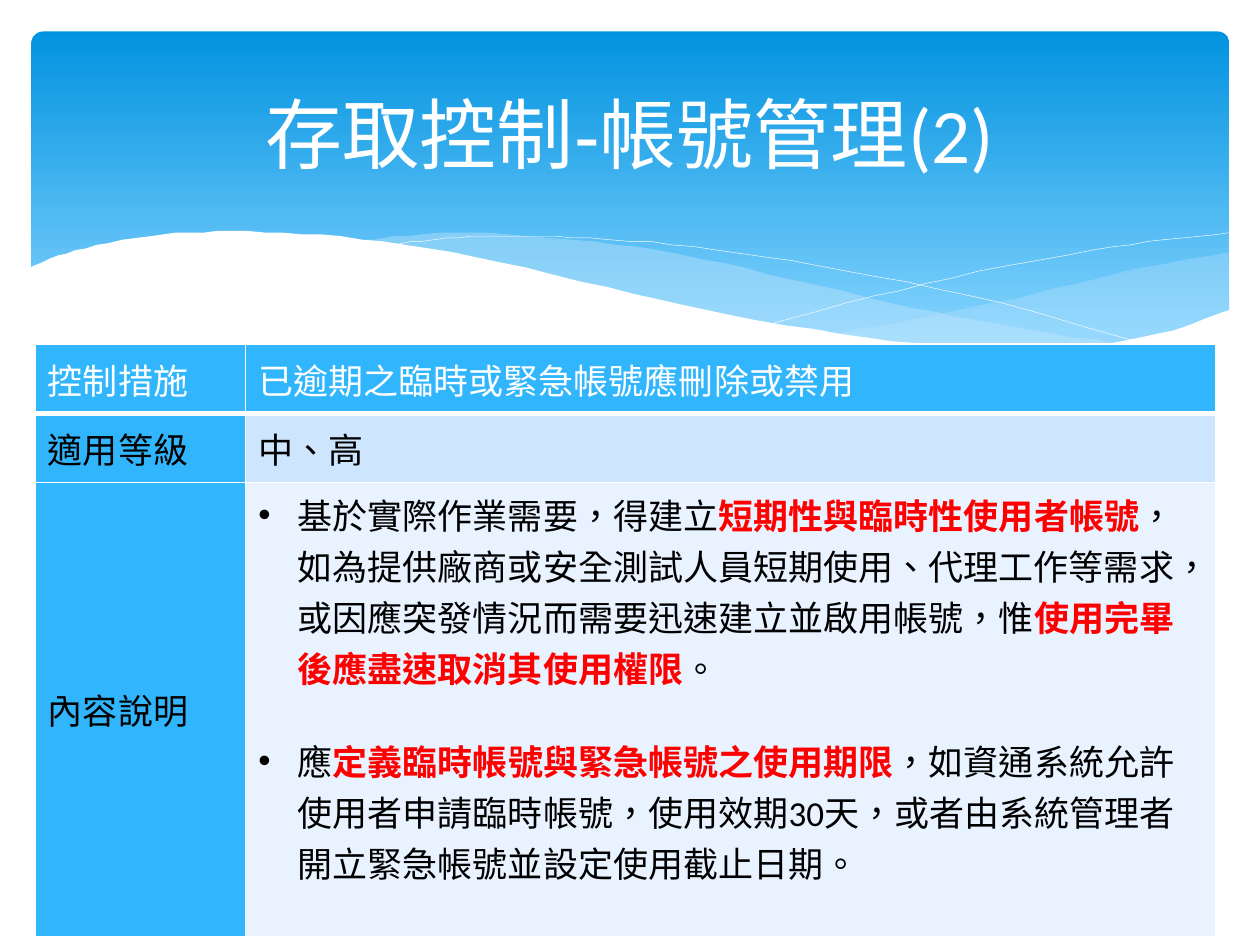
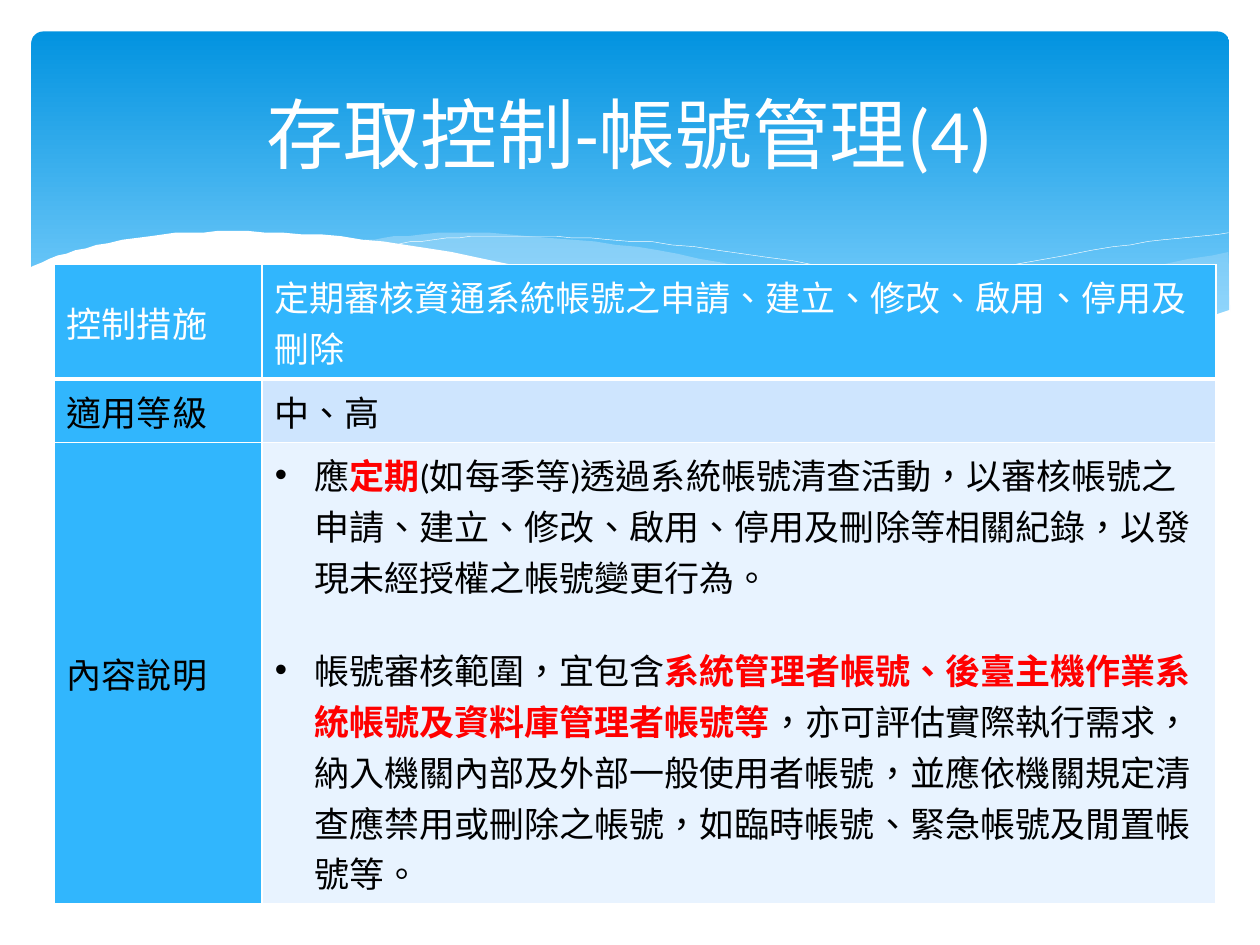
import pptx
import pptx.util
import pptx.dml.color
import pptx.enum.dml
import pptx.enum.lang
import pptx.enum.shapes
import pptx.enum.text
from dataclasses import dataclass
from lxml import etree
from pptx.oxml.ns import qn

Pt = pptx.util.Pt


@dataclass(frozen=True)
class Theme:
    white: str = "FFFFFF"
    black: str = "000000"
    red: str = "FF0000"
    sky: str = "31B6FD"
    pale: str = "CEE5FE"
    faint: str = "E8F3FF"
    mist: str = "C6E7FC"
    deep: str = "0293E0"
    light: str = "83D3FE"
    font: str = "Calibri"
    title: int = 44
    body: int = 20
    gap: float = 24.4
    hang: float = 22.5


THEME = Theme()
LABELS = ["控制措施", "適用等級", "內容說明"]

# In each note, every second part is stressed.
SLIDES = [
    dict(
        title=[("存取控制-", "Arial"), ("帳號管理(2)", THEME.font)],
        control="已逾期之臨時或緊急帳號應刪除或禁用",
        level="中、高",
        notes=[
            ["基於實際作業需要，得建立", "短期性與臨時性使用者帳號",
             "，如為提供廠商或安全測試人員短期使用、代理工作等需求，"
             "或因應突發情況而需要迅速建立並啟用帳號，惟",
             "使用完畢後應盡速取消其使用權限", "。"],
            ["應", "定義臨時帳號與緊急帳號之使用期限",
             "，如資通系統允許使用者申請臨時帳號，使用效期30天，"
             "或者由系統管理者開立緊急帳號並設定使用截止日期。"],
        ],
        at=(20.2, 196.6), cols=(120.2, 554.4), rows=(39.6, 39.6, 258.5), foot=28,
    ),
    dict(
        title=[("存取控制-帳號管理(4)", THEME.font)],
        control="定期審核資通系統帳號之申請、建立、修改、啟用、停用及刪除",
        level="中、高",
        notes=[
            ["應", "定期",
             "(如每季等)透過系統帳號清查活動，以審核帳號之申請、建立、修改、"
             "啟用、停用及刪除等相關紀錄，以發現未經授權之帳號變更行為。"],
            ["帳號審核範圍，宜包含",
             "系統管理者帳號、後臺主機作業系統帳號及資料庫管理者帳號等",
             "，亦可評估實際執行需求，納入機關內部及外部一般使用者帳號，"
             "並應依機關規定清查應禁用或刪除之帳號，如臨時帳號、緊急帳號及閒置帳號等。"],
        ],
        at=(31, 151.2), cols=(118.8, 545), rows=(65.4, 36.1, 263.3), foot=3.6,
    ),
]

# Each wave is a list of edges; each edge is a smooth curve through its points.
RIGHT = [
    [(702.5, 144), (652.3, 153.4), (620, 160.6), (579.6, 170.6), (524.9, 182.2),
     (476, 190.8)],
    [(476, 190.8), (517.7, 195.8), (553.7, 199.4), (586, 200.2), (614.9, 198.7),
     (645.8, 194.4), (673.2, 188.6), (702.5, 177.8)],
]
MIDDLE = [
    [(643, 196.6), (602.6, 190.8), (558, 182.9), (508.3, 172.8), (452.9, 159.8),
     (399.6, 147.6), (352, 139.7), (302.4, 134.6), (260, 133.2), (225.4, 135.4),
     (206, 137.5)],
    [(206, 137.5), (246.2, 143.3), (290.9, 152), (323.3, 159.8), (381.6, 172.8),
     (432.7, 183.6), (478.8, 191.5), (519.8, 197.3), (556.6, 199.4), (589, 200.2),
     (617, 199.4), (643, 196.6)],
]
FALL = [
    [(222.5, 140.4), (241.2, 137.5), (269.3, 135.4), (299.5, 134.6), (337.7, 136.1),
     (383.8, 139.7), (437.8, 146.9), (500.4, 157.7), (572.4, 173.5), (653, 195.8)],
]
RISE = [
    [(441.4, 185), (500.4, 169.2), (558.7, 155.5), (623.5, 143.3), (665.3, 136.8),
     (702, 133.2)],
]
FRONT = [
    [(703.4, 177.1), (669.6, 188.6), (630, 196.6), (582.5, 199.4), (535.7, 197.3),
     (481, 190.8), (416.9, 180), (362.2, 167.8), (301, 153.4), (244.8, 141.8),
     (195.1, 135.4), (151.9, 132.5), (115.9, 132.5), (85.7, 134.6), (54.7, 140.4),
     (33.1, 146.2), (16.6, 153.4)],
    [(16.6, 236.9), (703.4, 236.9)],
]
# edges, fill, opacity in percent; no fill means an open white line
WAVES = [
    (RIGHT, THEME.mist, 29),
    (MIDDLE, THEME.mist, 40),
    (FALL, None, 100),
    (RISE, None, 100),
    (FRONT, THEME.white, 100),
]


def rgb(code):
    return pptx.dml.color.RGBColor.from_string(code)


def paint(fill, code):
    fill.solid()
    fill.fore_color.rgb = rgb(code)


def curve(edge, steps=4):
    """Return points on the Catmull-Rom spline through the edge."""
    ends = [edge[0], *edge, edge[-1]]
    dots = [edge[0]]
    for a, b, c, d in zip(ends, ends[1:], ends[2:], ends[3:]):
        for step in range(1, steps + 1):
            t = step / steps
            dots.append(tuple(
                (2 * q + (r - p) * t + (2 * p - 5 * q + 4 * r - s) * t ** 2
                 + (3 * q - p - 3 * r + s) * t ** 3) / 2
                for p, q, r, s in zip(a, b, c, d)))
    return dots


def add_wave(slide, edges, code, solid):
    dots = [dot for edge in edges for dot in curve(edge)]
    pen = slide.shapes.build_freeform(*dots[0], scale=Pt(1))
    pen.add_line_segments(dots[1:], close=code is not None)
    wave = pen.convert_to_shape()
    wave.shadow.inherit = False
    if code is None:
        wave.fill.background()
        paint(wave.line.fill, THEME.white)
        wave.line.width = Pt(0.25)
        return
    wave.line.fill.background()
    paint(wave.fill, code)
    if solid < 100:
        tint = wave.element.spPr.find(f".//{qn('a:srgbClr')}")
        etree.SubElement(tint, qn("a:alpha"), val=str(solid * 1000))


def add_band(slide):
    band = slide.shapes.add_shape(
        pptx.enum.shapes.MSO_SHAPE.ROUNDED_RECTANGLE, Pt(18), Pt(18), Pt(684.5), Pt(194.4))
    band.adjustments[0] = 0.034
    band.shadow.inherit = False
    band.line.fill.background()
    band.fill.gradient()
    band.fill.gradient_angle = 270
    for stop, code, place in zip(
            band.fill.gradient_stops, (THEME.deep, THEME.light), (0, 0.9)):
        stop.color.rgb = rgb(code)
        stop.position = place
    for wave in WAVES:
        add_wave(slide, *wave)


def add_run(para, text, size, code, bold=False, font=THEME.font):
    run = para.add_run()
    run.text = text
    run.font.name = font
    run.font.size = Pt(size)
    run.font.bold = bold
    run.font.color.rgb = rgb(code)
    run.font.language_id = pptx.enum.lang.MSO_LANGUAGE_ID.TRADITIONAL_CHINESE


def set_title(slide, parts):
    title = slide.shapes.title
    title.left, title.top, title.width, title.height = map(Pt, (36, 26.6, 648, 98.6))
    title.text_frame.vertical_anchor = pptx.enum.text.MSO_ANCHOR.MIDDLE
    para = title.text_frame.paragraphs[0]
    para.alignment = pptx.enum.text.PP_ALIGN.CENTER
    for text, font in parts:
        add_run(para, text, THEME.title, THEME.white, font=font)
    title.element.getparent().append(title.element)


def set_cell(cell, code, head):
    """Give the cell its white borders, fill and anchor."""
    props = cell._tc.get_or_add_tcPr()
    for side in "LRTB":
        wide = (side == "B" and head == 0) or (side == "T" and head == 1)
        line = etree.SubElement(props, qn(f"a:ln{side}"), w=str(Pt(3 if wide else 1)))
        fill = etree.SubElement(line, qn("a:solidFill"))
        etree.SubElement(fill, qn("a:srgbClr"), val=THEME.white)
    paint(cell.fill, code)
    cell.vertical_anchor = pptx.enum.text.MSO_ANCHOR.MIDDLE


def add_notes(cell, notes):
    for index, note in enumerate(notes):
        frame = cell.text_frame
        para = frame.add_paragraph() if index else frame.paragraphs[0]
        if index:
            para.space_before = Pt(THEME.gap)
        props = para._p.get_or_add_pPr()
        props.set("marL", str(Pt(THEME.hang)))
        props.set("indent", str(-Pt(THEME.hang)))
        etree.SubElement(props, qn("a:buFont"), typeface="Arial")
        etree.SubElement(props, qn("a:buChar"), char="•")
        for place, text in enumerate(note):
            key = place % 2 == 1
            add_run(para, text, THEME.body, THEME.red if key else THEME.black, key)


def add_grid(slide, page):
    cols, rows = page["cols"], page["rows"]
    grid = slide.shapes.add_table(
        len(rows), len(cols), *map(Pt, (*page["at"], sum(cols), sum(rows)))).table
    grid.first_row = grid.horz_banding = False
    for col, width in zip(grid.columns, cols):
        col.width = Pt(width)
    for row, height in zip(grid.rows, rows):
        row.height = Pt(height)

    values = [page["control"], page["level"], None]
    fills = [THEME.sky, THEME.pale, THEME.faint]
    for index, (label, value, code) in enumerate(zip(LABELS, values, fills)):
        ink = THEME.black if index else THEME.white
        for col, (text, back) in enumerate([(label, THEME.sky), (value, code)]):
            cell = grid.cell(index, col)
            set_cell(cell, back, index)
            if text:
                add_run(cell.text_frame.paragraphs[0], text, THEME.body, ink)
    notes = grid.cell(2, 1)
    notes.margin_bottom = Pt(page["foot"])
    add_notes(notes, page["notes"])


def main():
    deck = pptx.Presentation()
    deck.slide_width, deck.slide_height = Pt(720), Pt(540)
    for page in SLIDES:
        slide = deck.slides.add_slide(deck.slide_layouts[5])
        add_band(slide)
        set_title(slide, page["title"])
        add_grid(slide, page)
    deck.save("out.pptx")


if __name__ == "__main__":
    main()
